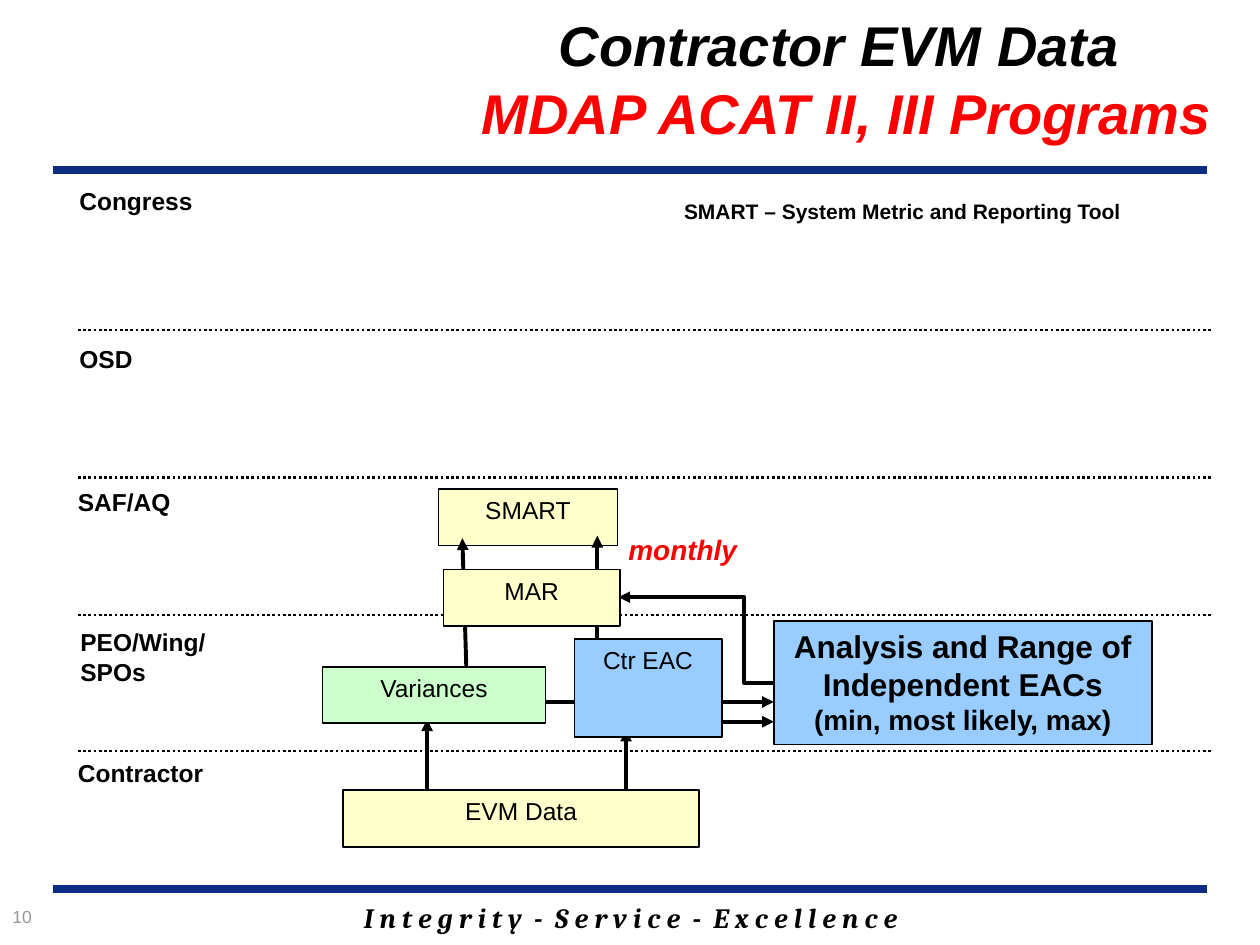
from pptx import Presentation
from pptx.dml.color import RGBColor
from pptx.enum.dml import MSO_LINE as Dash
from pptx.enum.shapes import MSO_CONNECTOR as Link, MSO_SHAPE as Form
from pptx.enum.text import MSO_ANCHOR as Anchor, PP_ALIGN as Align
from pptx.oxml.ns import qn
from pptx.util import Cm, Pt
from lxml.etree import SubElement as Sub

BLACK = RGBColor(0x00, 0x00, 0x00)
RED = RGBColor(0xFF, 0x00, 0x00)
GRAY = RGBColor(0x96, 0x96, 0x96)
NAVY = RGBColor(0x0C, 0x2D, 0x83)
CREAM = RGBColor(0xFF, 0xFF, 0xCC)
GREEN = RGBColor(0xCC, 0xFF, 0xCC)
BLUE = RGBColor(0x99, 0xCC, 0xFF)


class Page:
    def __init__(self, slide):
        self.shapes = slide.shapes
        self.base = {"name": "Arial", "size": 14, "color": BLACK}

    def style(self, font, **form):
        for key, val in {**self.base, **form}.items():
            if key == "color":
                font.color.rgb = val
            else:
                setattr(font, key, Pt(val) if key == "size" else val)

    def label(self, shape, paras, align, **form):
        """Fill a shape; a paragraph is a list of (text, format) lines."""
        frame = shape.text_frame
        for i, lines in enumerate(paras):
            para = frame.add_paragraph() if i else frame.paragraphs[0]
            para.alignment = align
            for j, (text, own) in enumerate(lines):
                if j:
                    para.add_line_break()
                run = para.add_run()
                run.text = text
                self.style(run.font, **{**form, **own})
        return frame

    def text(self, area, *paras, align=Align.LEFT, wrap=True, **form):
        box = self.shapes.add_textbox(*map(Cm, area))
        frame = self.label(box, paras, align, **form)
        frame.word_wrap = wrap
        return frame

    def box(self, area, fill, *paras, **form):
        rect = self.shapes.add_shape(Form.RECTANGLE, *map(Cm, area))
        rect.shadow.inherit = False
        rect.fill.solid()
        rect.fill.fore_color.rgb = fill
        rect.line.color.rgb = BLACK
        rect.line.width = Pt(1)
        frame = self.label(rect, paras, Align.CENTER, **form)
        frame.word_wrap = True
        frame.vertical_anchor = Anchor.TOP

    def line(self, ends, color=BLACK, width=2.25, dash=None, kind=Link.STRAIGHT):
        link = self.shapes.add_connector(kind, *map(Cm, ends))
        link.line.color.rgb = color
        link.line.width = Pt(width)
        if dash:
            link.line.dash_style = dash
        Sub(link._element.spPr, qn("a:effectLst"))
        return link

    def arrow(self, ends, bend=None):
        """Draw an arrow; bend is the share of the width before the elbow."""
        link = self.line(ends, kind=Link.ELBOW if bend else Link.STRAIGHT)
        props = link._element.spPr
        Sub(props.find(qn("a:ln")), qn("a:tailEnd"), type="triangle")
        if bend:
            guides = props.find(qn("a:prstGeom")).get_or_add_avLst()
            Sub(guides, qn("a:gd"), name="adj1", fmla=f"val {round(bend * 100000)}")


def one(text, **form):
    """Make a paragraph of a single line."""
    return [(text, form)]


def main():
    deck = Presentation()
    deck.slide_width, deck.slide_height = Cm(25.4), Cm(19.05)
    page = Page(deck.slides.add_slide(deck.slide_layouts[6]))

    page.text((3.61, 18.03, 18.21, 0.94),
              one("I n t e g r i t y  -  S e r v i c e  -  E x c e l l e n c e"),
              align=Align.CENTER, name="Cambria", size=16, bold=True, italic=True)
    for y in (17.93, 3.43):
        page.line((1.07, y, 24.33, y), NAVY, 4.5)
    page.text((0, 18.14, 3.38, 0.84), one("10"), size=10, color=GRAY)

    page.box((8.84, 9.86, 3.61, 1.14), CREAM, one("SMART"))
    for ends in ((12.04, 12.9, 12.04, 10.8), (10.95, 14.15, 15.6, 14.15),
                 (12.62, 15.98, 12.62, 14.71), (8.61, 16, 8.61, 14.5),
                 (9.4, 13.44, 9.32, 10.85)):
        page.arrow(ends)

    title = page.text((8.74, 0, 16.66, 3.15),
                      [("Contractor EVM Data ", {}),
                       ("MDAP ACAT II, III Programs", {"color": RED})],
                      align=Align.CENTER, size=32, bold=True, italic=True)
    title.vertical_anchor = Anchor.MIDDLE

    for y in (6.65, 9.63, 12.4, 15.14):
        page.line((1.57, y, 24.43, y), width=1.5, dash=Dash.ROUND_DOT)
    page.box((6.91, 15.93, 7.19, 1.14), CREAM, one("EVM Data"))
    for level, x, y, w in (("Contractor", 1.32, 15.16, 4.11),
                           ("Congress", 1.35, 3.63, 3.76),
                           ("OSD", 1.35, 6.81, 2.03),
                           ("SAF/AQ", 1.32, 9.7, 3.18)):
        page.text((x, y, w, 1.09), one(level), wrap=False, bold=True)

    page.box((15.6, 12.52, 7.62, 2.49), BLUE,
             one("Analysis and Range of Independent EACs", size=18),
             one("(min, most likely, max)", size=16), bold=True)
    page.box((6.5, 13.44, 4.5, 1.14), GREEN, one("Variances"))
    page.box((11.58, 12.88, 2.97, 1.98), BLUE, one("Ctr EAC"))
    page.arrow((14.53, 14.55, 15.6, 14.55))
    page.text((12.42, 10.62, 2.72, 0.94), one("monthly"), wrap=False,
              size=16, color=RED, bold=True, italic=True)
    page.box((8.94, 11.48, 3.56, 1.14), CREAM, one("MAR"))
    page.arrow((15.6, 13.77, 12.47, 12.04), bend=0.19)

    note = page.text((13.54, 3.94, 10.72, 0.71),
                     one("SMART – System Metric and Reporting Tool"),
                     size=12, bold=True)
    note.paragraphs[0].line_spacing = 0.9
    page.text((1.37, 12.52, 3.71, 1.45), one("PEO/Wing/"), one("SPOs"), bold=True)

    deck.save("out.pptx")


if __name__ == "__main__":
    main()
